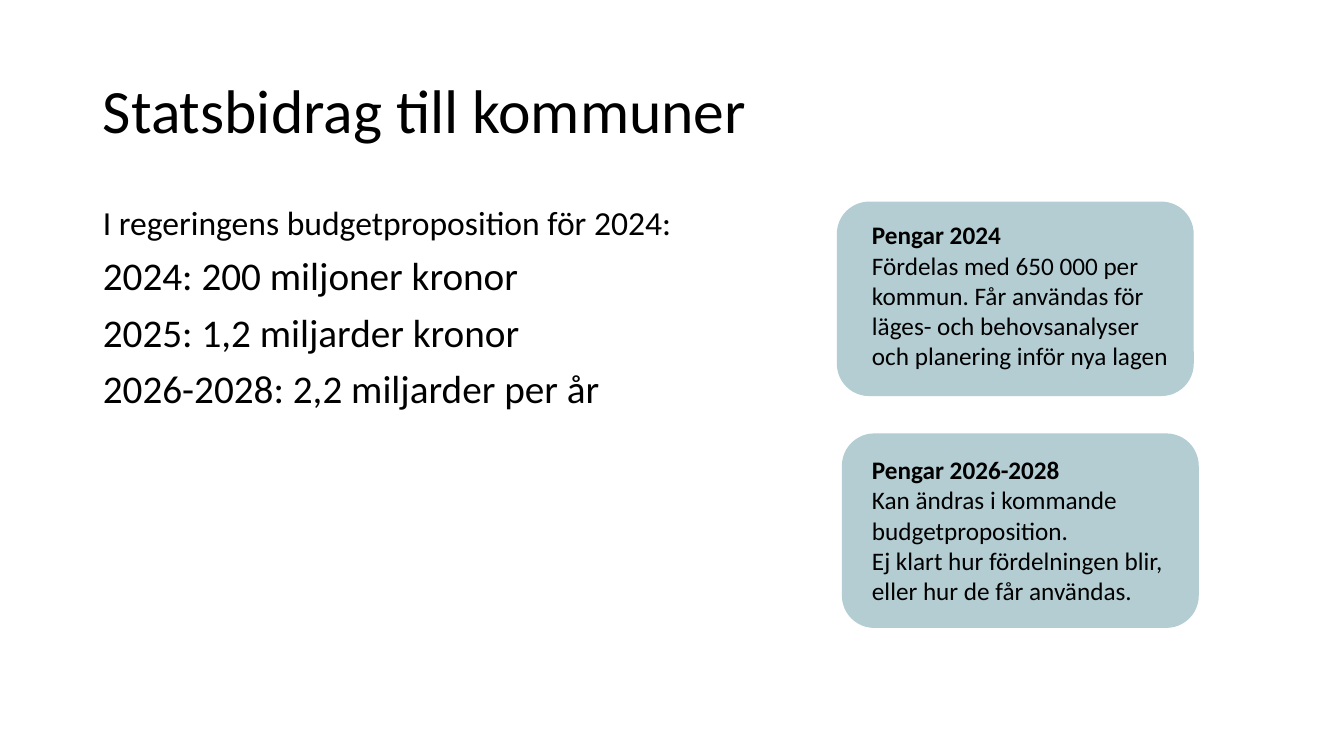
"""Build the slide on state grants to municipalities."""
from dataclasses import dataclass

from pptx import Presentation
from pptx.dml.color import RGBColor
from pptx.enum.shapes import MSO_SHAPE
from pptx.enum.text import MSO_ANCHOR, MSO_AUTO_SIZE, PP_ALIGN
from pptx.oxml.ns import qn
from pptx.util import Inches, Pt


@dataclass(frozen=True)
class Theme:
    font: str = "Calibri"
    ink: RGBColor = RGBColor(0x00, 0x00, 0x00)
    panel: RGBColor = RGBColor(0xB3, 0xCD, 0xD2)
    title: int = 44
    lead: int = 24
    item: int = 28
    note: int = 18


class SlideBuilder:
    def __init__(self, prs, theme):
        self.theme = theme
        self.s = prs.slides.add_slide(prs.slide_layouts[1])

    def place(self, sp, left, top, width, height):
        sp.left, sp.top = Inches(left), Inches(top)
        sp.width, sp.height = Inches(width), Inches(height)

    def add_lines(self, tf, lines, spacing=1.0, before=0):
        tf.word_wrap = True
        for i, (text, size, bold) in enumerate(lines):
            p = tf.paragraphs[0] if i == 0 else tf.add_paragraph()
            p.alignment = PP_ALIGN.LEFT
            p.line_spacing = spacing
            p.space_before = Pt(before)
            r = p.add_run()
            r.text = text
            r.font.name = self.theme.font
            r.font.size = Pt(size)
            r.font.bold = bold
            r.font.color.rgb = self.theme.ink

    def title(self, text, box):
        sp = self.s.shapes.title
        self.place(sp, *box)
        tf = sp.text_frame
        tf.auto_size = MSO_AUTO_SIZE.NONE
        tf.vertical_anchor = MSO_ANCHOR.MIDDLE
        self.add_lines(tf, [(text, self.theme.title, False)], 0.9)

    def body(self, lead, items, box):
        sp = self.s.placeholders[1]
        self.place(sp, *box)
        tf = sp.text_frame
        tf.auto_size = MSO_AUTO_SIZE.NONE
        lines = [(lead, self.theme.lead, False)]
        lines += [(item, self.theme.item, False) for item in items]
        self.add_lines(tf, lines, 0.9, 10)
        for p in tf.paragraphs:
            pPr = p._p.get_or_add_pPr()
            pPr.set("marL", "0")
            pPr.set("indent", "0")
            pPr.append(pPr.makeelement(qn("a:buNone"), {}))

    def panel(self, left, top):
        sp = self.s.shapes.add_shape(
            MSO_SHAPE.ROUNDED_RECTANGLE,
            Inches(left), Inches(top), Inches(3.54), Inches(1.93))
        sp.shadow.inherit = False
        sp.fill.solid()
        sp.fill.fore_color.rgb = self.theme.panel
        sp.line.fill.background()

    def note(self, heading, texts, top):
        sp = self.s.shapes.add_textbox(
            Inches(8.55), Inches(top), Inches(3.15), Inches(1.62))
        tf = sp.text_frame
        tf.auto_size = MSO_AUTO_SIZE.SHAPE_TO_FIT_TEXT
        lines = [(heading, self.theme.note, True)]
        lines += [(text, self.theme.note, False) for text in texts]
        self.add_lines(tf, lines)


def main():
    prs = Presentation()
    prs.slide_width, prs.slide_height = Inches(13.33), Inches(7.5)
    slide = SlideBuilder(prs, Theme())

    slide.title("Statsbidrag till kommuner", (0.92, 0.4, 11.5, 1.45))
    slide.body(
        "I regeringens budgetproposition för 2024:",
        ["2024: 200 miljoner kronor",
         "2025: 1,2 miljarder kronor",
         "2026-2028: 2,2 miljarder per år"],
        (0.92, 2, 6.57, 4.76))

    cards = [
        (8.3, 2, 2.13, "Pengar 2024",
         ["Fördelas med 650 000 per kommun. Får användas för läges- och "
          "behovsanalyser och planering inför nya lagen"]),
        (8.35, 4.3, 4.46, "Pengar 2026-2028",
         ["Kan ändras i kommande budgetproposition.",
          "Ej klart hur fördelningen blir, eller hur de får användas."]),
    ]
    for left, top, text_top, heading, texts in cards:
        slide.panel(left, top)
        slide.note(heading, texts, text_top)

    prs.save("out.pptx")


if __name__ == "__main__":
    main()
